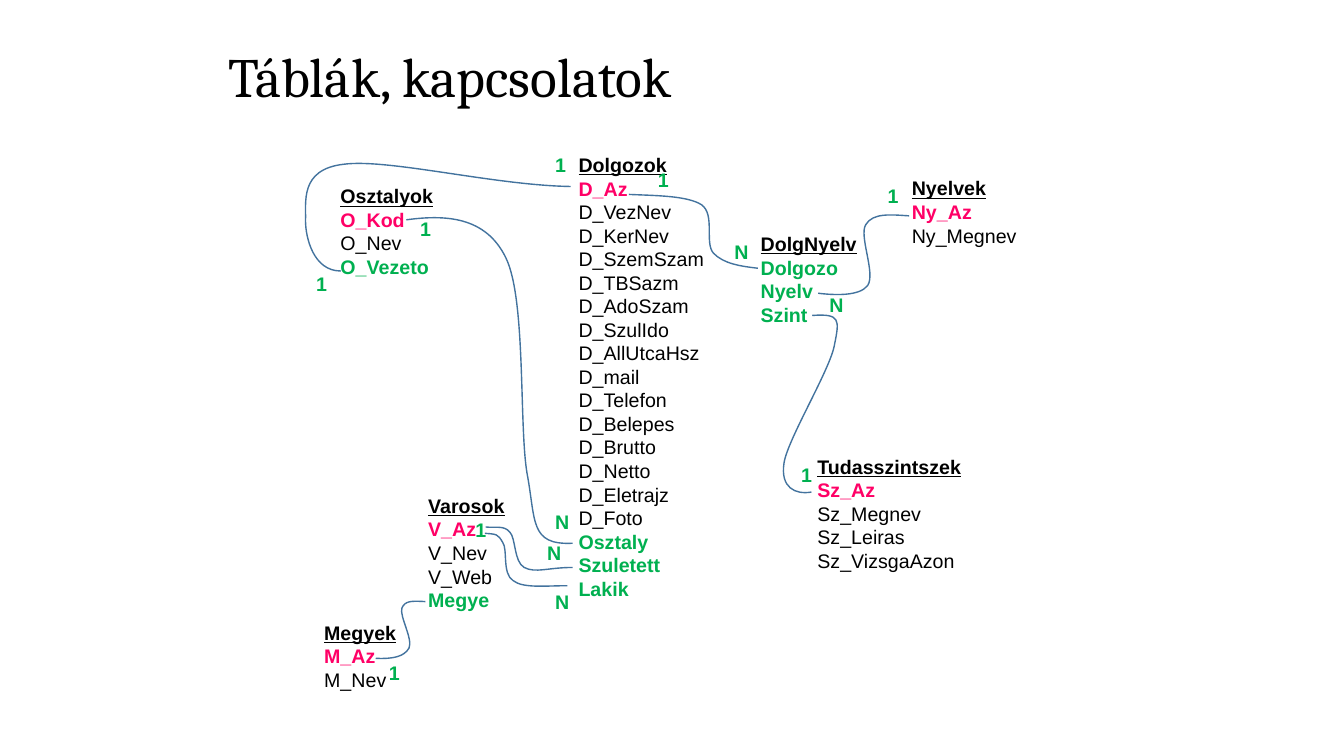
from lxml import etree
from pptx import Presentation
from pptx import util as u
from pptx.dml.color import RGBColor
from pptx.enum import text
from pptx.oxml import ns

COLORS = {
    "ink": "000000",
    "primary": "FF0066",
    "foreign": "00B050",
    "link": "43739E",
    "paper": "FFFFFF",
}

TABLES = [
    ("Dolgozok", 14.33, 3.73, 3.71, "D_Az",
     "D_VezNev D_KerNev D_SzemSzam D_TBSazm D_AdoSzam D_SzulIdo D_AllUtcaHsz D_mail "
     "D_Telefon D_Belepes D_Brutto D_Netto D_Eletrajz D_Foto", "Osztaly Szuletett Lakik"),
    ("Osztalyok", 8.33, 4.52, 2.87, "O_Kod", "O_Nev", "O_Vezeto"),
    ("Varosok", 10.54, 12.32, 2.44, "V_Az", "V_Nev V_Web", "Megye"),
    ("Megyek", 7.92, 15.52, 2.34, "M_Az", "M_Nev", ""),
    ("Nyelvek", 22.73, 4.32, 3.18, "Ny_Az", "Ny_Megnev", ""),
    ("DolgNyelv", 18.92, 5.72, 2.95, "", "", "Dolgozo Nyelv Szint"),
    ("Tudasszintszek", 20.35, 11.33, 4.14, "Sz_Az", "Sz_Megnev Sz_Leiras Sz_VizsgaAzon", ""),
]

LINKS = [
    [(10.24, 5.54), (11.2, 5.41), (12.24, 5.44), (12.75, 6.5), (13.26, 7.54),
     (13.08, 10.69), (13.28, 11.91), (13.51, 13.13), (13.34, 13.74), (14.43, 13.69)],
    [(12.24, 13.28), (12.5, 13.31), (12.7, 13.23), (12.85, 13.41), (13, 13.56),
     (12.95, 14.15), (13.21, 14.3), (13.49, 14.45), (13.82, 14.3), (14.43, 14.3)],
    [(14.3, 14.76), (13.74, 14.76), (13.18, 14.83), (12.93, 14.63), (12.65, 14.45),
     (12.8, 13.84), (12.67, 13.67), (12.55, 13.46), (12.52, 13.46), (12.22, 13.44)],
    [(8.59, 6.83), (7.9, 6.83), (7.7, 5.99), (7.7, 5.56), (7.72, 5.11),
     (7.54, 4.27), (8.66, 4.14), (9.78, 3.99), (12.45, 4.67), (14.38, 4.7)],
    [(15.85, 4.9), (16.51, 4.93), (17.32, 4.93), (17.68, 5.16), (18.03, 5.41),
     (17.75, 6.12), (17.98, 6.38), (18.24, 6.65), (18.67, 6.71), (19.1, 6.76)],
    [(20.62, 7.39), (21.03, 7.44), (21.67, 7.47), (21.87, 7.19), (22.07, 6.88),
     (21.64, 5.94), (21.82, 5.66), (22, 5.36), (22.45, 5.41), (22.91, 5.44)],
    [(20.47, 7.95), (21.18, 7.9), (21.16, 8.05), (21.03, 8.69), (20.93, 9.3),
     (19.86, 11.05), (19.76, 11.66), (19.66, 12.29), (20.04, 12.47), (20.45, 12.4)],
    [(10.72, 15.16), (10.36, 15.14), (10.21, 15.14), (10.13, 15.32), (10.06, 15.52),
     (10.41, 16.1), (10.31, 16.33), (10.19, 16.54), (9.93, 16.61), (9.47, 16.59)],
]

CARDINALITIES = {
    "1": [(13.74, 3.73), (7.72, 6.73), (10.34, 5.33), (11.73, 12.93), (9.55, 16.54),
          (16.33, 4.11), (22.12, 4.52), (19.94, 11.53)],
    "N": [(13.74, 12.73), (13.54, 13.51), (13.74, 14.73), (18.26, 5.92), (20.65, 7.26)],
}


class Diagram:
    body_font = "Arial"
    title_font = "Cambria"
    body_size = 14
    title_size = 39.6
    row_height = 0.6
    padding = 0.25

    def __init__(self, page):
        self.page = page

    def color(self, name):
        return RGBColor.from_string(COLORS[name])

    def format(self, para, color, bold=False, underline=False, font=None, size=None):
        for span in para.runs:
            span.font.name = font or self.body_font
            span.font.size = u.Pt(size or self.body_size)
            span.font.bold = bold
            span.font.underline = underline
            span.font.color.rgb = self.color(color)

    def box(self, words, left, top, width, height):
        box = self.page.shapes.add_textbox(u.Cm(left), u.Cm(top), u.Cm(width), u.Cm(height))
        box.text_frame.text = words
        return box

    def title(self, words):
        box = self.box(words, 5.51, 1.27, 22.86, 1.45)
        box.fill.solid()
        box.fill.fore_color.rgb = self.color("paper")
        paper = next(box._element.iter(ns.qn("a:srgbClr")))
        etree.SubElement(paper, ns.qn("a:alpha"), val="55000")
        frame = box.text_frame
        frame.word_wrap = True
        frame.vertical_anchor = text.MSO_ANCHOR.MIDDLE
        para = frame.paragraphs[0]
        para.line_spacing = 0.9
        self.format(para, "ink", font=self.title_font, size=self.title_size)

    def fit(self, box):
        box.text_frame.word_wrap = False
        box.text_frame.auto_size = text.MSO_AUTO_SIZE.SHAPE_TO_FIT_TEXT

    def table(self, name, left, top, width, primary, plain, foreign):
        groups = [("primary", primary), ("ink", plain), ("foreign", foreign)]
        fields = [(field, color) for color, names in groups for field in names.split()]
        words = "\n".join([name] + [field for field, color in fields])
        height = self.padding + self.row_height * (len(fields) + 1)
        box = self.box(words, left, top, width, height)
        self.fit(box)
        heading, *rows = box.text_frame.paragraphs
        self.format(heading, "ink", bold=True, underline=True)
        for para, (field, color) in zip(rows, fields):
            self.format(para, color, bold=color != "ink")

    def link(self, points):
        start, *rest = [(u.Cm(x), u.Cm(y)) for x, y in points]
        builder = self.page.shapes.build_freeform(*start)
        builder.add_line_segments(rest, close=False)
        curve = builder.convert_to_shape()
        curve.shadow.inherit = False
        curve.fill.background()
        curve.line.color.rgb = self.color("link")
        curve.line.width = u.Pt(1)
        segments = list(curve._element.iter(ns.qn("a:lnTo")))
        for first in range(0, len(segments), 3):
            bend = etree.Element(ns.qn("a:cubicBezTo"))
            segments[first].addprevious(bend)
            for segment in segments[first:first + 3]:
                bend.append(segment[0])
                segment.getparent().remove(segment)

    def cardinality(self, mark, left, top):
        box = self.box(mark, left, top, 0.79 if mark == "1" else 0.89, 0.86)
        self.fit(box)
        self.format(box.text_frame.paragraphs[0], "foreign", bold=True)


def main():
    deck = Presentation()
    deck.slide_width = u.Cm(33.87)
    deck.slide_height = u.Cm(19.05)
    diagram = Diagram(deck.slides.add_slide(deck.slide_layouts[6]))
    for table in TABLES:
        diagram.table(*table)
    for points in LINKS:
        diagram.link(points)
    for mark, places in CARDINALITIES.items():
        for left, top in places:
            diagram.cardinality(mark, left, top)
    diagram.title("Táblák, kapcsolatok")
    deck.save("out.pptx")


if __name__ == "__main__":
    main()
